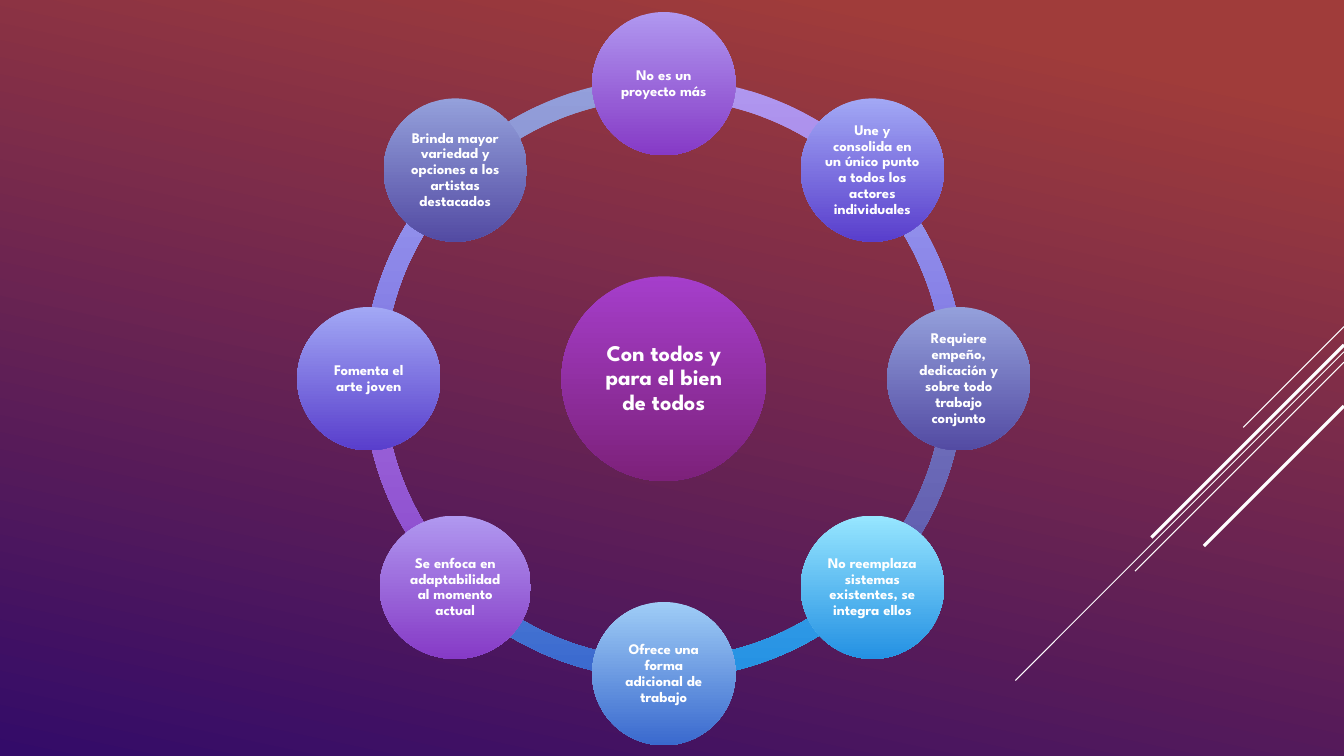
import math
from dataclasses import dataclass

import pptx
import pptx.dml.color
import pptx.enum.dml
import pptx.enum.shapes
import pptx.enum.text
import pptx.oxml
import pptx.oxml.ns
import pptx.util

Pt = pptx.util.Pt
RGB = pptx.dml.color.RGBColor
SHAPE = pptx.enum.shapes.MSO_SHAPE

WHITE = RGB(0xFF, 0xFF, 0xFF)
BACKGROUND = (RGB(0xA0, 0x3C, 0x3A), RGB(0x33, 0x0B, 0x69))
MAGENTA = (RGB(0xA5, 0x3E, 0xCB), RGB(0x7D, 0x21, 0x7A))
PURPLE = (RGB(0xB0, 0x98, 0xF0), RGB(0x86, 0x3A, 0xC6))
INDIGO = (RGB(0xA2, 0xA8, 0xF5), RGB(0x59, 0x3E, 0xCC))
SLATE = (RGB(0x94, 0xA0, 0xDB), RGB(0x53, 0x4B, 0xA3))
CYAN = (RGB(0x97, 0xE6, 0xFF), RGB(0x24, 0x91, 0xE3))
BLUE = (RGB(0x9F, 0xCD, 0xF6), RGB(0x3A, 0x69, 0xCE))

WIDTH, HEIGHT = 960, 540
CENTER_X, CENTER_Y = 474.2, 270.5
RING_SIZE = 429
RING_THICKNESS = 0.034
ORBIT = 210.7
NODE_SIZE = 102.4
HUB_SIZE = 146.2
ADJ_PER_DEGREE = 0.6

FRAME_FORMAT = {
    "word_wrap": True,
    "vertical_anchor": pptx.enum.text.MSO_ANCHOR.MIDDLE,
    "margin_left": Pt(1.3),
    "margin_right": Pt(1.3),
    "margin_top": Pt(1.3),
    "margin_bottom": Pt(1.3),
}
PARAGRAPH_FORMAT = {"alignment": pptx.enum.text.PP_ALIGN.CENTER, "line_spacing": 0.9}
FONT_FORMAT = {"name": "League Spartan", "bold": True}


@dataclass
class Node:
    text: str
    colors: tuple
    width: float = NODE_SIZE


@dataclass
class Streak:
    top: float
    run: float
    weight: float


NODES = [
    Node("No es un proyecto más", PURPLE),
    Node("Une y consolida en un único punto a todos los actores individuales", INDIGO),
    Node("Requiere empeño, dedicación y sobre todo trabajo conjunto", SLATE),
    Node("No reemplaza sistemas existentes, se integra ellos", CYAN),
    Node("Ofrece una forma adicional de trabajo", BLUE),
    Node("Se enfoca en adaptabilidad al momento actual", PURPLE, 108),
    Node("Fomenta el arte joven", INDIGO),
    Node("Brinda mayor variedad y opciones a los artistas destacados", SLATE),
]
STREAKS = [
    Streak(233.3, 72, 0.75),
    Streak(251.3, 234.7, 0.75),
    Streak(258.7, 149.3, 0.75),
    Streak(246.4, 137.5, 2.25),
    Streak(290, 100, 2.25),
]


def apply(target: object, values: dict) -> None:
    for name, value in values.items():
        setattr(target, name, value)


def set_gradient(fill, colors: tuple, angle: float = 90, start: float = 0) -> None:
    fill.gradient()
    fill.gradient_angle = 360 - angle
    for stop, color, position in zip(fill.gradient_stops, colors, (start, 1)):
        stop.color.rgb = color
        stop.position = position


def add_centered(slide, kind, x: float, y: float, w: float, h: float, colors: tuple):
    sp = slide.shapes.add_shape(kind, Pt(x - w / 2), Pt(y - h / 2), Pt(w), Pt(h))
    sp.shadow.inherit = False
    sp.line.fill.background()
    set_gradient(sp.fill, colors)
    return sp


def add_circle(slide, node: Node, x: float, y: float, height: float, size: float) -> None:
    sp = add_centered(slide, SHAPE.OVAL, x, y, node.width, height, node.colors)
    tf = sp.text_frame
    apply(tf, FRAME_FORMAT)
    p = tf.paragraphs[0]
    apply(p, PARAGRAPH_FORMAT)
    r = p.add_run()
    r.text = node.text
    apply(r.font, FONT_FORMAT | {"size": Pt(size)})
    r.font.color.rgb = WHITE


def add_arc(slide, start: float, sweep: float, colors: tuple) -> None:
    sp = add_centered(slide, SHAPE.BLOCK_ARC, CENTER_X, CENTER_Y, RING_SIZE, RING_SIZE, colors)
    sp.adjustments[0] = start % 360 * ADJ_PER_DEGREE
    sp.adjustments[1] = (start + sweep) % 360 * ADJ_PER_DEGREE
    sp.adjustments[2] = RING_THICKNESS


def add_streak(slide, streak: Streak) -> None:
    line = slide.shapes.add_connector(
        pptx.enum.shapes.MSO_CONNECTOR.STRAIGHT,
        Pt(WIDTH), Pt(streak.top), Pt(WIDTH - streak.run), Pt(streak.top + streak.run),
    )
    line.line.color.rgb = WHITE
    line.line.width = Pt(streak.weight)
    sp_pr = line._element.spPr
    sp_pr.append(pptx.oxml.parse_xml(f"<a:effectLst {pptx.oxml.ns.nsdecls('a')}/>"))


def main() -> None:
    prs = pptx.Presentation()
    prs.slide_width, prs.slide_height = Pt(WIDTH), Pt(HEIGHT)
    slide = prs.slides.add_slide(prs.slide_layouts[6])
    set_gradient(slide.background.fill, BACKGROUND, 102, 0.1)

    for streak in STREAKS:
        add_streak(slide, streak)

    step = 360 / len(NODES)
    angles = [step * i - 90 for i in range(len(NODES))]
    for node, angle in zip(NODES, angles):
        add_arc(slide, angle, step, node.colors)

    hub = Node("Con todos y para el bien de todos", MAGENTA, HUB_SIZE)
    add_circle(slide, hub, CENTER_X, CENTER_Y, HUB_SIZE, 16)
    for node, angle in zip(NODES, angles):
        x = CENTER_X + ORBIT * math.cos(math.radians(angle))
        y = CENTER_Y + ORBIT * math.sin(math.radians(angle))
        add_circle(slide, node, x, y, NODE_SIZE, 10.5)

    prs.save("out.pptx")


if __name__ == "__main__":
    main()
